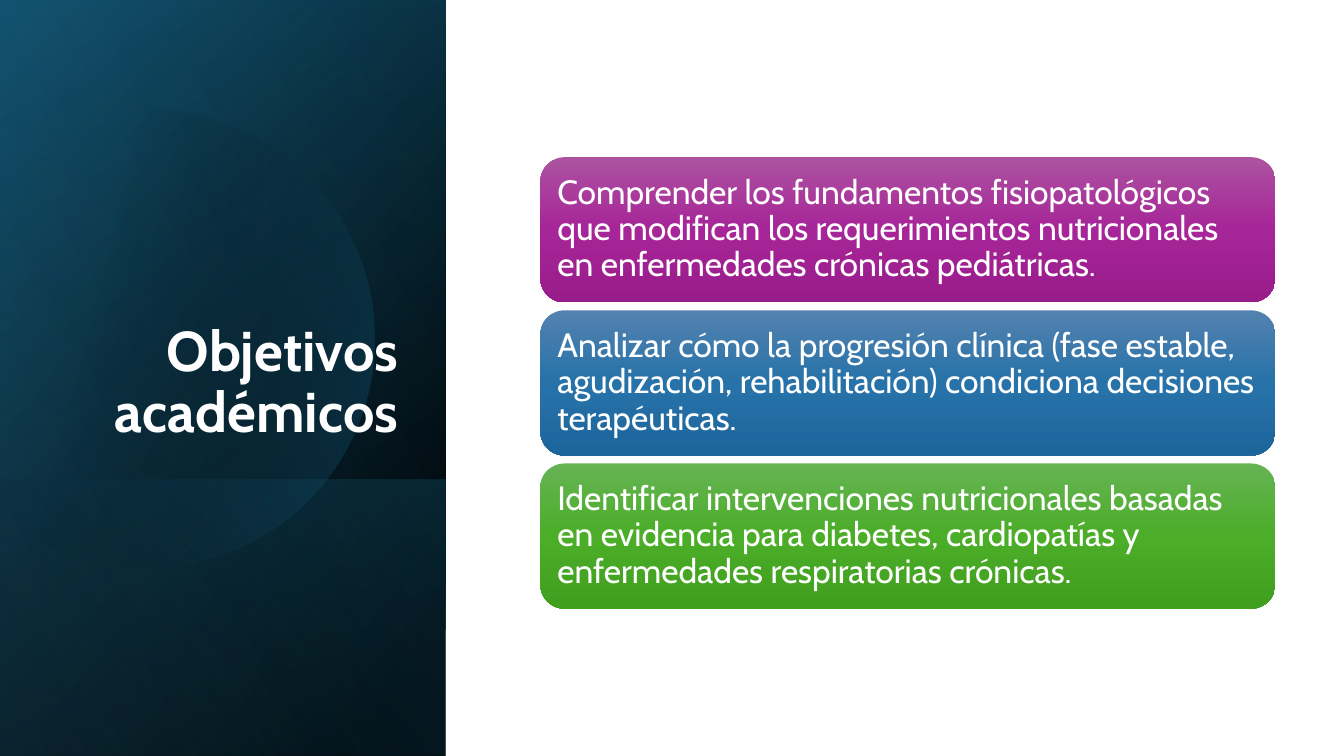
import math
from dataclasses import dataclass

from lxml import etree
from pptx import Presentation
from pptx import util as u
from pptx.dml.color import RGBColor
from pptx.enum import shapes, text
from pptx.oxml.ns import qn

WHITE = RGBColor(0xFF, 0xFF, 0xFF)
BLACK = RGBColor(0x00, 0x00, 0x00)
NAVY = RGBColor(0x10, 0x48, 0x62)
TEAL = RGBColor(0x15, 0x60, 0x82)
SKY = RGBColor(0x46, 0xB1, 0xE1)
PURPLES = (RGBColor(0xAC, 0x53, 0xA0), RGBColor(0xA6, 0x25, 0x98), RGBColor(0x99, 0x1C, 0x8B))
BLUES = (RGBColor(0x53, 0x82, 0xAF), RGBColor(0x27, 0x72, 0xA9), RGBColor(0x1D, 0x66, 0x9C))
GREENS = (RGBColor(0x66, 0xB3, 0x54), RGBColor(0x4B, 0xAD, 0x28), RGBColor(0x40, 0x9F, 0x1E))

FONT = "Cabin"
SLIDE_W, SLIDE_H = 960, 540
PANEL_W = 318.4
CARD_LEFT, CARD_TOP, CARD_W, CARD_H, CARD_PITCH = 386, 112.3, 525, 103.7, 109.4


@dataclass(frozen=True)
class Stop:
    position: int
    color: RGBColor
    opacity: int = 100


@dataclass(frozen=True)
class Layer:
    top: float
    angle: int
    stops: tuple[Stop, ...]


@dataclass(frozen=True)
class Card:
    colors: tuple[RGBColor, ...]
    wording: str


BACK_LAYERS = (
    Layer(0, 50, (Stop(8, BLACK), Stop(100, NAVY))),
    Layer(0, 30, (Stop(0, BLACK, 0), Stop(99, TEAL, 46))),
    Layer(342.7, 130, (Stop(2, TEAL, 29), Stop(100, BLACK, 30))),
)
CIRCLE_STOPS = (Stop(29, BLACK, 0), Stop(100, TEAL, 43))
FRONT_LAYER = Layer(0, 120, (Stop(0, BLACK, 0), Stop(99, SKY, 11)))
CARDS = (
    Card(PURPLES, "Comprender los fundamentos fisiopatológicos que modifican los "
                  "requerimientos nutricionales en enfermedades crónicas pediátricas."),
    Card(BLUES, "Analizar cómo la progresión clínica (fase estable, agudización, "
                "rehabilitación) condiciona decisiones terapéuticas."),
    Card(GREENS, "Identificar intervenciones nutricionales basadas en evidencia para "
                 "diabetes, cardiopatías y enfermedades respiratorias crónicas."),
)


def paint_gradient(sp, stops: tuple[Stop, ...], angle: float) -> None:
    """Fill with a linear gradient, angle clockwise in degrees; no line or shadow."""
    sp.shadow.inherit = False
    sp.line.fill.background()
    sp.fill.gradient()
    grad = sp.element.spPr.find(qn("a:gradFill"))
    stop_list = grad.find(qn("a:gsLst"))
    for old in list(stop_list):
        stop_list.remove(old)
    for stop in stops:
        gs = etree.SubElement(stop_list, qn("a:gs"), pos=str(stop.position * 1000))
        color = etree.SubElement(gs, qn("a:srgbClr"), val=str(stop.color))
        if stop.opacity < 100:
            etree.SubElement(color, qn("a:alpha"), val=str(stop.opacity * 1000))
    lin = grad.find(qn("a:lin"))
    lin.set("ang", str(round(angle * 60000)))
    lin.set("scaled", "0")


def add_layer(s, layer: Layer) -> None:
    """Add a panel layer, turned a quarter and mirrored, from its top to the slide's foot."""
    height = SLIDE_H - layer.top
    left = (PANEL_W - height) / 2
    top = layer.top + (height - PANEL_W) / 2
    sp = s.shapes.add_shape(shapes.MSO_SHAPE.RECTANGLE, u.Pt(left), u.Pt(top),
                            u.Pt(height), u.Pt(PANEL_W))
    sp.rotation = 90
    sp.element.spPr.find(qn("a:xfrm")).set("flipH", "1")
    paint_gradient(sp, layer.stops, layer.angle)


def add_circle(s) -> None:
    """Add the circle, cut off at the slide's left edge."""
    cx, cy, radius, steps = 104.4, 242, 163.4, 120
    half = math.acos(-cx / radius)
    angles = [half * (2 * i / steps - 1) for i in range(steps + 1)]
    points = [(u.Pt(cx + radius * math.cos(a)), u.Pt(cy + radius * math.sin(a)))
              for a in angles]
    builder = s.shapes.build_freeform(*points[0])
    builder.add_line_segments(points[1:], close=True)
    paint_gradient(builder.convert_to_shape(), CIRCLE_STOPS, 14)


def write(sp, wording: str, size: float, align, anchor, bold: bool = False) -> None:
    tf = sp.text_frame
    tf.word_wrap = True
    tf.vertical_anchor = anchor
    p = tf.paragraphs[0]
    p.alignment = align
    p.line_spacing = 0.9
    r = p.add_run()
    r.text = wording
    r.font.name = FONT
    r.font.size = u.Pt(size)
    r.font.bold = bold
    r.font.color.rgb = WHITE


def add_card(s, card: Card, top: float) -> None:
    sp = s.shapes.add_shape(shapes.MSO_SHAPE.ROUNDED_RECTANGLE, u.Pt(CARD_LEFT), u.Pt(top),
                            u.Pt(CARD_W), u.Pt(CARD_H))
    paint_gradient(sp, tuple(Stop(50 * i, c) for i, c in enumerate(card.colors)), 90)
    tf = sp.text_frame
    tf.margin_left = tf.margin_right = tf.margin_top = tf.margin_bottom = u.Pt(7.2)
    write(sp, card.wording, 24, text.PP_ALIGN.LEFT, text.MSO_ANCHOR.MIDDLE)


def main() -> None:
    prs = Presentation()
    prs.slide_width, prs.slide_height = u.Pt(SLIDE_W), u.Pt(SLIDE_H)
    s = prs.slides.add_slide(prs.slide_layouts[6])
    for layer in BACK_LAYERS:
        add_layer(s, layer)
    add_circle(s)
    add_layer(s, FRONT_LAYER)
    title = s.shapes.add_textbox(u.Pt(46), u.Pt(132.5), u.Pt(245.5), u.Pt(188.6))
    write(title, "Objetivos académicos", 40, text.PP_ALIGN.RIGHT, text.MSO_ANCHOR.BOTTOM, True)
    for i, card in enumerate(CARDS):
        add_card(s, card, CARD_TOP + i * CARD_PITCH)
    prs.save("out.pptx")


if __name__ == "__main__":
    main()
